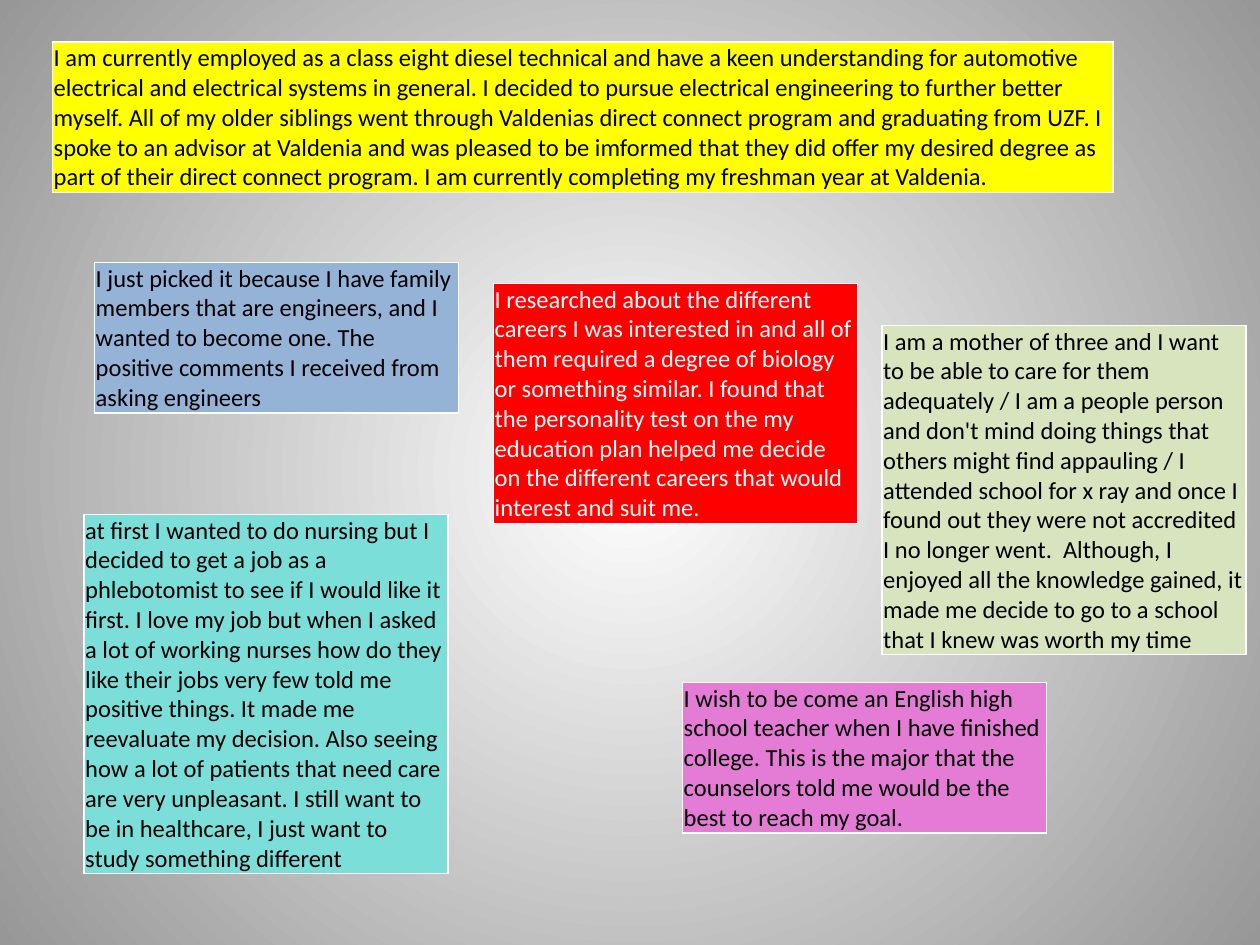
from dataclasses import dataclass

from lxml.etree import SubElement
from pptx import Presentation
from pptx.dml.color import RGBColor
from pptx.enum.text import MSO_ANCHOR as Anchor
from pptx.oxml import parse_xml
from pptx.oxml.ns import nsdecls, qn
from pptx.slide import Slide
from pptx.table import _Cell as Cell
from pptx.util import Pt

COLORS = {
    "black": "000000",
    "white": "FFFFFF",
    "gray": "979797",
    "yellow": "FFFF00",
    "blue": "95B3D7",
    "red": "FF0000",
    "pink": "E47CD5",
    "green": "D7E4BD",
    "teal": "7CDED9",
}
NOTE_W = 208
INSET = 0.72


@dataclass
class Quote:
    """A student's answer in a one-cell table; lengths in points."""
    left: float
    top: float
    height: float
    fill: str
    text: str
    width: float = NOTE_W
    color: str = "black"
    anchor: Anchor = Anchor.TOP


QUOTES = [
    Quote(30, 24, 85, "yellow",
          "I am currently employed as a class eight diesel technical and have a keen "
          "understanding for automotive electrical and electrical systems in general. "
          "I decided to pursue electrical engineering to further better myself. All of "
          "my older siblings went through Valdenias direct connect program and "
          "graduating from UZF. I spoke to an advisor at Valdenia and was pleased to be "
          "imformed that they did offer my desired degree as part of their direct "
          "connect program. I am currently completing my freshman year at Valdenia.",
          width=606),
    Quote(54, 150, 85, "blue",
          "I just picked it because I have family members that are engineers, and I "
          "wanted to become one. The positive comments I received from asking engineers",
          anchor=Anchor.BOTTOM),
    Quote(282, 162, 135, "red",
          "I researched about the different careers I was interested in and all of them "
          "required a degree of biology or something similar. I found that the "
          "personality test on the my education plan helped me decide on the different "
          "careers that would interest and suit me.",
          color="white", anchor=Anchor.BOTTOM),
    Quote(390, 390, 85, "pink",
          "I wish to be come an English high school teacher when I have finished "
          "college. This is the major that the counselors told me would be the best to "
          "reach my goal.",
          anchor=Anchor.BOTTOM),
    Quote(504, 186, 186, "green",
          "I am a mother of three and I want to be able to care for them adequately / "
          "I am a people person and don't mind doing things that others might find "
          "appauling / I attended school for x ray and once I found out they were not "
          "accredited I no longer went.  Although, I enjoyed all the knowledge gained, "
          "it made me decide to go to a school that I knew was worth my time"),
    Quote(48, 294, 202, "teal",
          "at first I wanted to do nursing but I decided to get a job as a phlebotomist "
          "to see if I would like it first. I love my job but when I asked a lot of "
          "working nurses how do they like their jobs very few told me positive things. "
          "It made me reevaluate my decision. Also seeing how a lot of patients that "
          "need care are very unpleasant. I still want to be in healthcare, I just want "
          "to study something different"),
]


def rgb(name: str) -> RGBColor:
    return RGBColor.from_string(COLORS[name])


def set_radial_background(s: Slide, center: str, edge: str) -> None:
    fill = s.background.fill
    fill.gradient()
    for stop, name, position in zip(fill.gradient_stops, (center, edge), (0, 1)):
        stop.color.rgb = rgb(name)
        stop.position = position
    lin = next(s.background._cSld.iter(qn("a:lin")))
    lin.getparent().replace(lin, parse_xml(
        f'<a:path {nsdecls("a")} path="circle">'
        '<a:fillToRect l="50000" t="50000" r="50000" b="50000"/></a:path>'))


def add_borders(cell: Cell, name: str, width: float) -> None:
    """Outline the cell; call before filling, as the fill follows the lines."""
    tc_pr = cell._tc.get_or_add_tcPr()
    for side in ("lnL", "lnR", "lnT", "lnB"):
        ln = SubElement(tc_pr, qn(f"a:{side}"), w=str(Pt(width)))
        solid = SubElement(ln, qn("a:solidFill"))
        SubElement(solid, qn("a:srgbClr"), val=COLORS[name])


def add_quote(s: Slide, quote: Quote) -> None:
    table = s.shapes.add_table(1, 1, Pt(quote.left), Pt(quote.top),
                               Pt(quote.width), Pt(quote.height)).table
    table.first_row = table.horz_banding = False
    cell = table.cell(0, 0)
    add_borders(cell, "white", 1)
    cell.fill.solid()
    cell.fill.fore_color.rgb = rgb(quote.fill)
    cell.margin_left = cell.margin_right = cell.margin_top = Pt(INSET)
    cell.margin_bottom = 0
    cell.vertical_anchor = quote.anchor
    p = cell.text_frame.paragraphs[0]
    p.text = quote.text
    p.font.name, p.font.size, p.font.bold = "Calibri", Pt(14), False
    p.font.color.rgb = rgb(quote.color)


def main() -> None:
    prs = Presentation()
    prs.slide_width, prs.slide_height = Pt(720), Pt(540)
    s = prs.slides.add_slide(prs.slide_layouts[6])
    set_radial_background(s, "white", "gray")
    for quote in QUOTES:
        add_quote(s, quote)
    prs.save("out.pptx")


if __name__ == "__main__":
    main()
